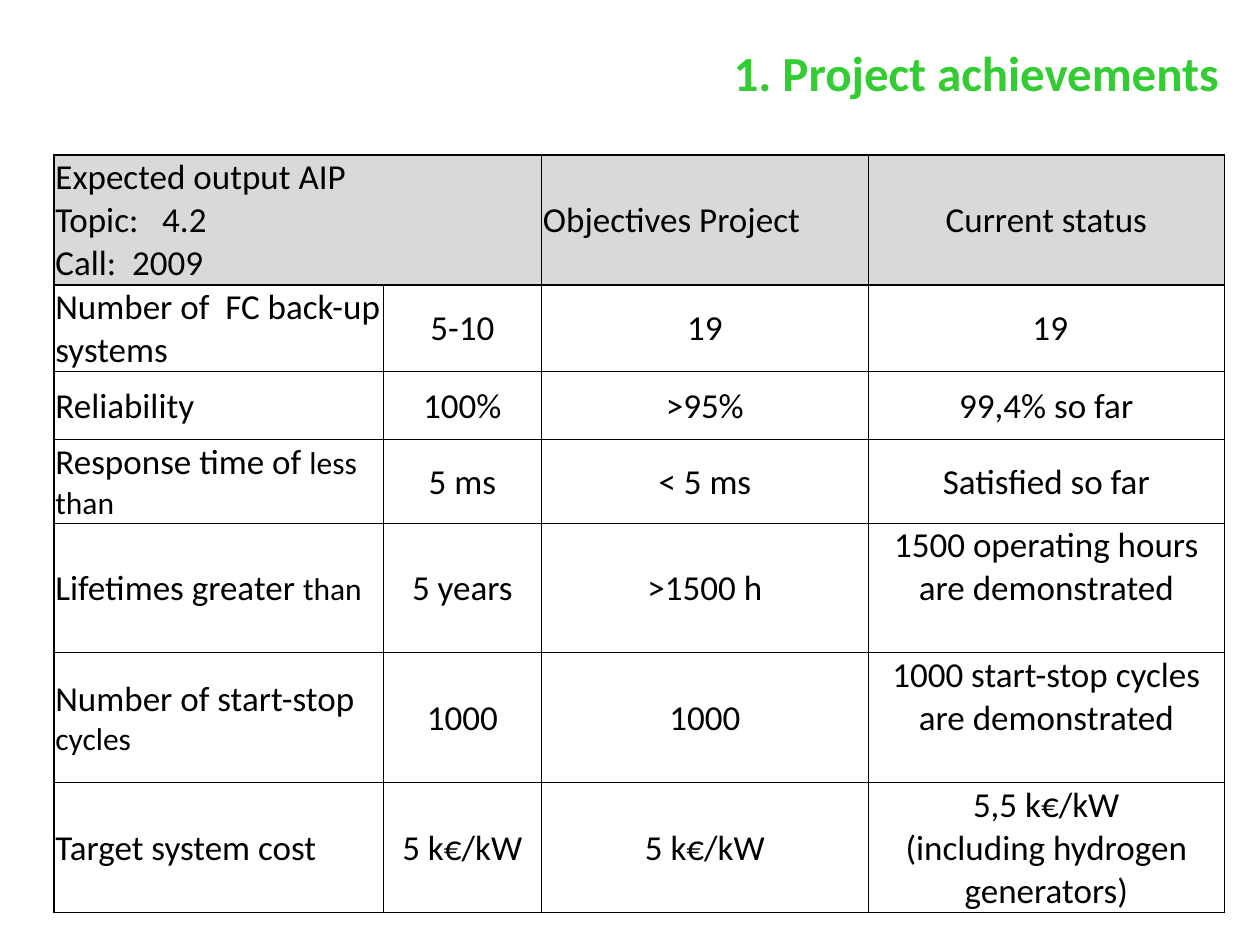
import lxml.etree
import pptx
import pptx.dml.color
import pptx.enum.text
import pptx.oxml.ns
import pptx.util

Inches = pptx.util.Inches
Pt = pptx.util.Pt
ALIGN = pptx.enum.text.PP_ALIGN
MIDDLE = pptx.enum.text.MSO_ANCHOR.MIDDLE

COLORS = {"title": "33CC33", "text": "000000", "header": "D9D9D9", "border": "000000"}
TITLE_FONT = {"name": "Calibri", "size": Pt(28), "bold": True}
BODY_FONT = {"name": "Calibri", "size": Pt(20)}
SMALL_FONT = {"name": "Calibri", "size": Pt(18)}
CELL_FORMAT = {
    "margin_left": Inches(0.01),
    "margin_right": Inches(0.01),
    "margin_top": Inches(0.01),
    "margin_bottom": 0,
    "vertical_anchor": MIDDLE,
}
RAISED_FORMAT = {**CELL_FORMAT, "margin_bottom": Inches(0.34)}

COLUMN_WIDTHS = [2.61, 1.26, 2.59, 2.83]
ROW_HEIGHTS = [1.03, 0.69, 0.54, 0.66, 1.03, 1.03, 1.03]
ROWS = [
    ["Expected output AIP \nTopic:   4.2\nCall:  2009", "", "Objectives Project", "Current status"],
    ["Number of  FC back-up systems", "5-10", "19", " 19"],
    ["Reliability", "100%", ">95%", "99,4% so far"],
    [("Response time of ", "less than"), "5 ms", "< 5 ms", "Satisfied so far"],
    [("Lifetimes greater ", "than"), "5 years", ">1500 h", "1500 operating hours are demonstrated"],
    [("Number of start-stop ", "cycles"), "1000", "1000", "1000 start-stop cycles are demonstrated"],
    ["Target system cost", "5 k€/kW", "5 k€/kW", ["5,5 k€/kW", "(including hydrogen generators)"]],
]
LEFT_ALIGNED = {(0, 0), (0, 2)} | {(row, 0) for row in range(1, len(ROWS))}
RAISED_CELLS = {(4, 3), (5, 3)}


def apply_format(target, values):
    for name, value in values.items():
        setattr(target, name, value)


def add_span(para, text, font, color):
    for index, line in enumerate(text.split("\n")):
        if index:
            para.add_line_break()
        span = para.add_run()
        span.text = line
        apply_format(span.font, font)
        span.font.color.rgb = pptx.dml.color.RGBColor.from_string(COLORS[color])


def fill_text(frame, content, alignment):
    paragraphs = content if isinstance(content, list) else [content]
    for index, parts in enumerate(paragraphs):
        para = frame.add_paragraph() if index else frame.paragraphs[0]
        para.alignment = alignment
        parts = parts if isinstance(parts, tuple) else (parts,)
        for part, font in zip(parts, (BODY_FONT, SMALL_FONT)):
            add_span(para, part, font, "text")


def set_borders(cell, row, column):
    widths = {
        "a:lnL": 0.5 if column else 1,
        "a:lnR": 0.5,
        "a:lnT": 1 if row < 2 else 0.5,
        "a:lnB": 0.5 if row else 1,
    }
    qn = pptx.oxml.ns.qn
    properties = cell._tc.get_or_add_tcPr()
    for index, (tag, width) in enumerate(widths.items()):
        line = lxml.etree.Element(qn(tag), w=str(Pt(width)))
        solid = lxml.etree.SubElement(line, qn("a:solidFill"))
        lxml.etree.SubElement(solid, qn("a:srgbClr"), val=COLORS["border"])
        properties.insert(index, line)


def add_title(page, left, top, width, height):
    box = page.shapes.add_textbox(Inches(left), Inches(top), Inches(width), Inches(height))
    apply_format(box.text_frame, {
        "word_wrap": True,
        "vertical_anchor": MIDDLE,
        "auto_size": pptx.enum.text.MSO_AUTO_SIZE.SHAPE_TO_FIT_TEXT,
    })
    para = box.text_frame.paragraphs[0]
    apply_format(para, {"alignment": ALIGN.RIGHT, "line_spacing": 1.02})
    add_span(para, "1. Project achievements", TITLE_FONT, "title")


def add_achievements(page, left, top, width, height):
    table = page.shapes.add_table(
        len(ROWS), len(COLUMN_WIDTHS), Inches(left), Inches(top), Inches(width), Inches(height)
    ).table
    apply_format(table, {"first_row": False, "horz_banding": False})
    for column, size in zip(table.columns, COLUMN_WIDTHS):
        column.width = Inches(size)
    for row, size in zip(table.rows, ROW_HEIGHTS):
        row.height = Inches(size)
    table.cell(0, 0).merge(table.cell(0, 1))
    for row, contents in enumerate(ROWS):
        for column, content in enumerate(contents):
            cell = table.cell(row, column)
            position = (row, column)
            apply_format(cell, RAISED_FORMAT if position in RAISED_CELLS else CELL_FORMAT)
            if row:
                cell.fill.background()
            else:
                cell.fill.solid()
                cell.fill.fore_color.rgb = pptx.dml.color.RGBColor.from_string(COLORS["header"])
            set_borders(cell, row, column)
            if content:
                alignment = ALIGN.LEFT if position in LEFT_ALIGNED else ALIGN.CENTER
                fill_text(cell.text_frame, content, alignment)


def main():
    deck = pptx.Presentation()
    apply_format(deck, {"slide_width": Inches(10), "slide_height": Inches(7.5)})
    page = deck.slides.add_slide(deck.slide_layouts[6])
    add_achievements(page, 0.43, 1.23, sum(COLUMN_WIDTHS), sum(ROW_HEIGHTS))
    add_title(page, 4.53, 0.29, 5.24, 0.56)
    deck.save("out.pptx")


if __name__ == "__main__":
    main()
